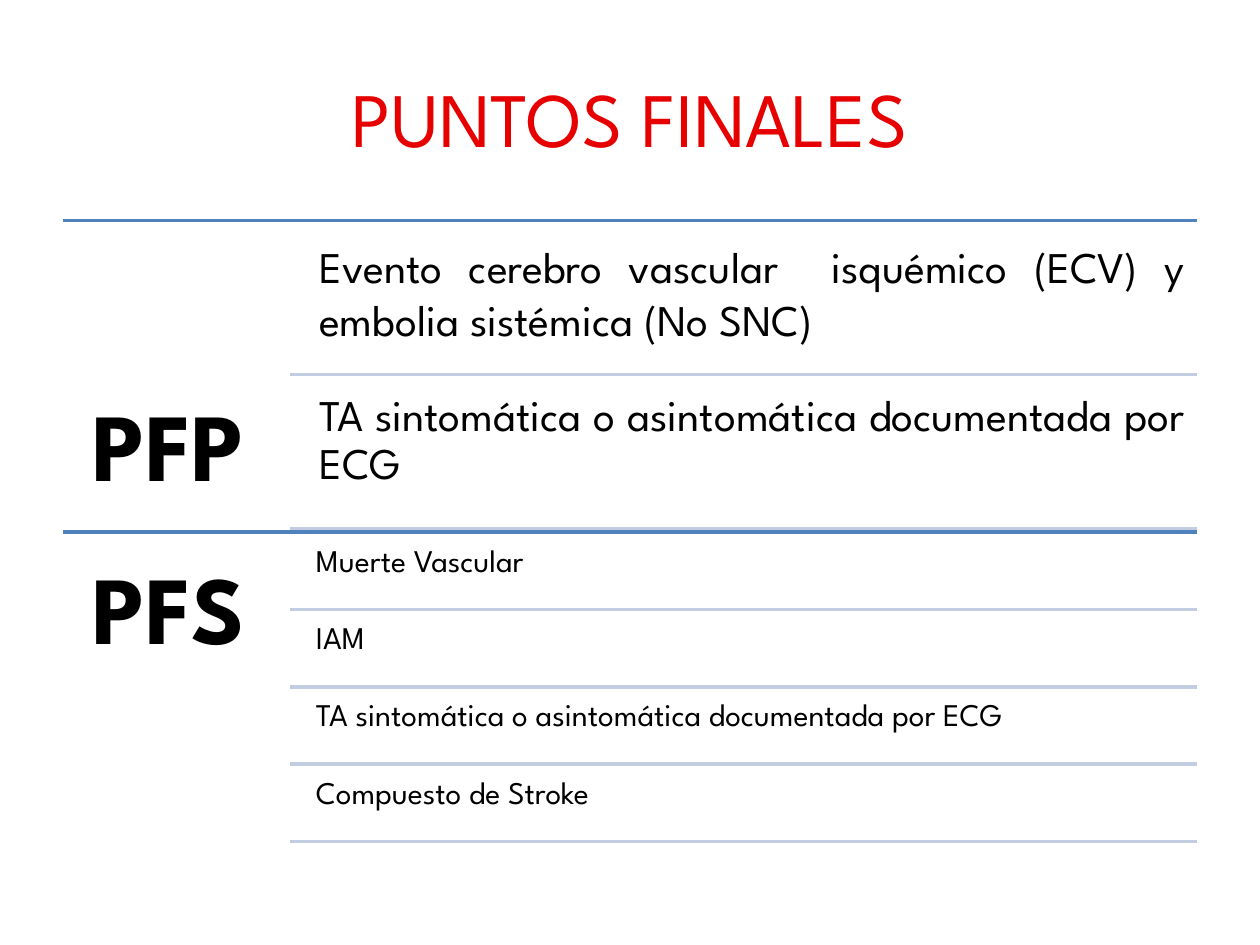
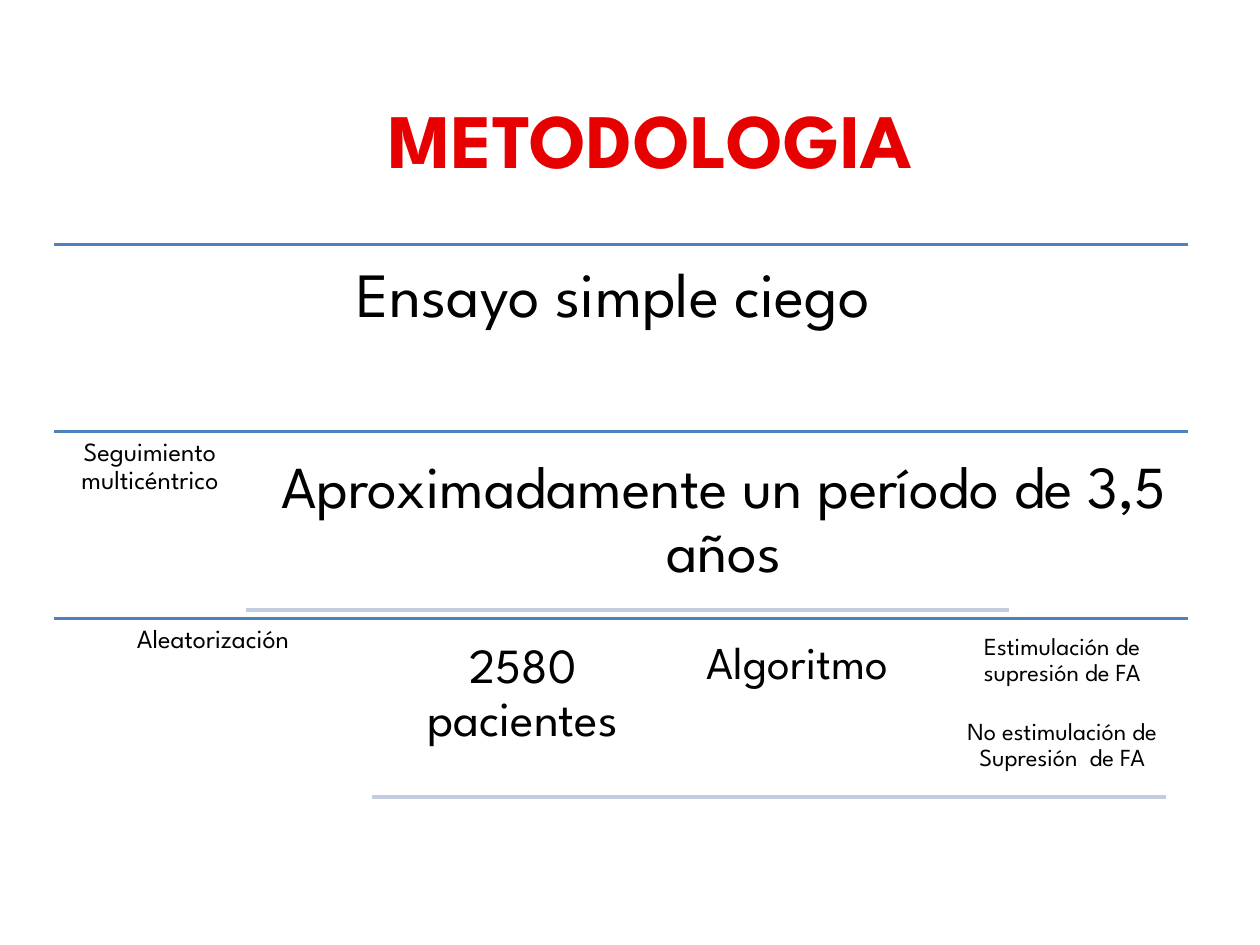
from pptx import Presentation
from pptx.dml.color import RGBColor
from pptx.enum.shapes import MSO_CONNECTOR
from pptx.enum.text import MSO_ANCHOR, PP_ALIGN
from pptx.util import Pt
from lxml.etree import SubElement
from pptx.oxml.ns import qn

FONT = "League Spartan"
RED = RGBColor(0xE6, 0x00, 0x00)
BLACK = RGBColor(0x00, 0x00, 0x00)
BLUE = RGBColor(0x4F, 0x81, 0xBD)
PALE = RGBColor(0xC2, 0xCD, 0xE1)
WIDTH = 648

ENDPOINTS = [
    {"label": "PFP", "drop": 85, "size": 25, "inset": 7, "gap": 4.2, "items": [
        ("Evento cerebro vascular  isquémico (ECV) y embolia sistémica (No SNC)", 1),
        ("TA sintomática o asintomática documentada por ECG", 0.9)]},
    {"label": "PFS", "drop": 0, "size": 18, "inset": 5.2, "gap": 2.2, "items": [
        ("Muerte Vascular", 0.9),
        ("IAM", 0.9),
        ("TA sintomática o asintomática documentada por ECG", 0.9),
        ("Compuesto de Stroke", 0.9)]},
]

# Each cell: text, left, width, size, inset, first half-row, half-rows
METHOD = [
    {"label": ("Ensayo simple ciego ", WIDTH, 36, 10.8), "cells": [], "rule": None},
    {"label": ("Seguimiento multicéntrico", 109.4, 15, 4.2), "rule": (140.4, 576.7), "cells": [
        ("Aproximadamente un período de 3,5 años", 148.3, 530.6, 34, 9.8, 0, 2)]},
    {"label": ("Aleatorización", 181.4, 15, 4.2), "rule": (212.4, 666), "cells": [
        ("2580 pacientes", 221, 155.5, 28, 8.2, 0, 2),
        ("Algoritmo", 384.5, 142.6, 26, 7.6, 0, 2),
        ("Estimulación de supresión de FA", 535.7, 142.6, 14, 4.2, 0, 1),
        ("No estimulación de Supresión  de FA", 535.7, 142.6, 14, 4.2, 1, 1)]},
]


def write(tf, text, *, size, color=BLACK, bold=False, align=PP_ALIGN.CENTER,
          spacing=0.9, inset=None, anchor=MSO_ANCHOR.TOP):
    tf.word_wrap = True
    tf.vertical_anchor = anchor
    if inset is not None:
        tf.margin_left = tf.margin_right = tf.margin_top = tf.margin_bottom = Pt(inset)
    p = tf.paragraphs[0]
    p.alignment, p.line_spacing = align, spacing
    r = p.add_run()
    r.text = text
    r.font.name, r.font.size, r.font.bold = FONT, Pt(size), bold
    r.font.color.rgb = color


def add_text(s, text, left, top, width, height, **fmt):
    sp = s.shapes.add_textbox(Pt(left), Pt(top), Pt(width), Pt(height))
    write(sp.text_frame, text, **fmt)


def add_rule(s, x1, x2, y, color):
    line = s.shapes.add_connector(MSO_CONNECTOR.STRAIGHT, Pt(x1), Pt(y), Pt(x2), Pt(y))
    line.line.color.rgb, line.line.width = color, Pt(2)
    SubElement(line._element.spPr, qn("a:effectLst"))


def add_slide(prs, title, left, top, bold):
    s = prs.slides.add_slide(prs.slide_layouts[5])
    sp = s.shapes.title
    sp.left, sp.top, sp.width, sp.height = Pt(left), Pt(top), Pt(WIDTH), Pt(90)
    write(sp.text_frame, title, size=44, color=RED, bold=bold, spacing=1,
          anchor=MSO_ANCHOR.MIDDLE)
    return s


def build_endpoints(prs):
    s = add_slide(prs, "PUNTOS FINALES", 36, 21.6, False)
    left, top, band, label_w, indent = 36, 126, 178, 129.6, 139.4
    right = left + WIDTH
    for i, group in enumerate(ENDPOINTS):
        y, gap, drop = top + i * band, group["gap"], group["drop"]
        add_rule(s, left, right, y, BLUE)
        add_text(s, group["label"], left, y + drop, label_w, band - drop,
                 size=55, bold=True, align=PP_ALIGN.JUSTIFY, inset=16.6)
        pitch = (band - gap / 2) / len(group["items"])
        for j, (text, spacing) in enumerate(group["items"]):
            row = y + gap + j * pitch
            add_text(s, text, left + indent, row, WIDTH - indent, pitch - gap,
                     size=group["size"], align=PP_ALIGN.JUSTIFY,
                     spacing=spacing, inset=group["inset"])
            add_rule(s, left + label_w, right, row + pitch - gap, PALE)


def build_method(prs):
    s = add_slide(prs, "METODOLOGIA", 48, 33.8, True)
    left, top, band, gap = 31, 139.8, 106.8, 4.8
    half = (band - 2 * gap) / 2
    for i, group in enumerate(METHOD):
        y = top + i * band
        text, width, size, inset = group["label"]
        add_rule(s, left, left + WIDTH, y, BLUE)
        add_text(s, text, left, y, width, band, size=size, inset=inset)
        for text, x, width, size, inset, first, count in group["cells"]:
            add_text(s, text, x, y + gap + first * half, width, count * half,
                     size=size, inset=inset)
        if group["rule"]:
            add_rule(s, *group["rule"], y + band - gap, PALE)


def main():
    prs = Presentation()
    prs.slide_width, prs.slide_height = Pt(720), Pt(540)
    build_endpoints(prs)
    build_method(prs)
    prs.save("out.pptx")


if __name__ == "__main__":
    main()
